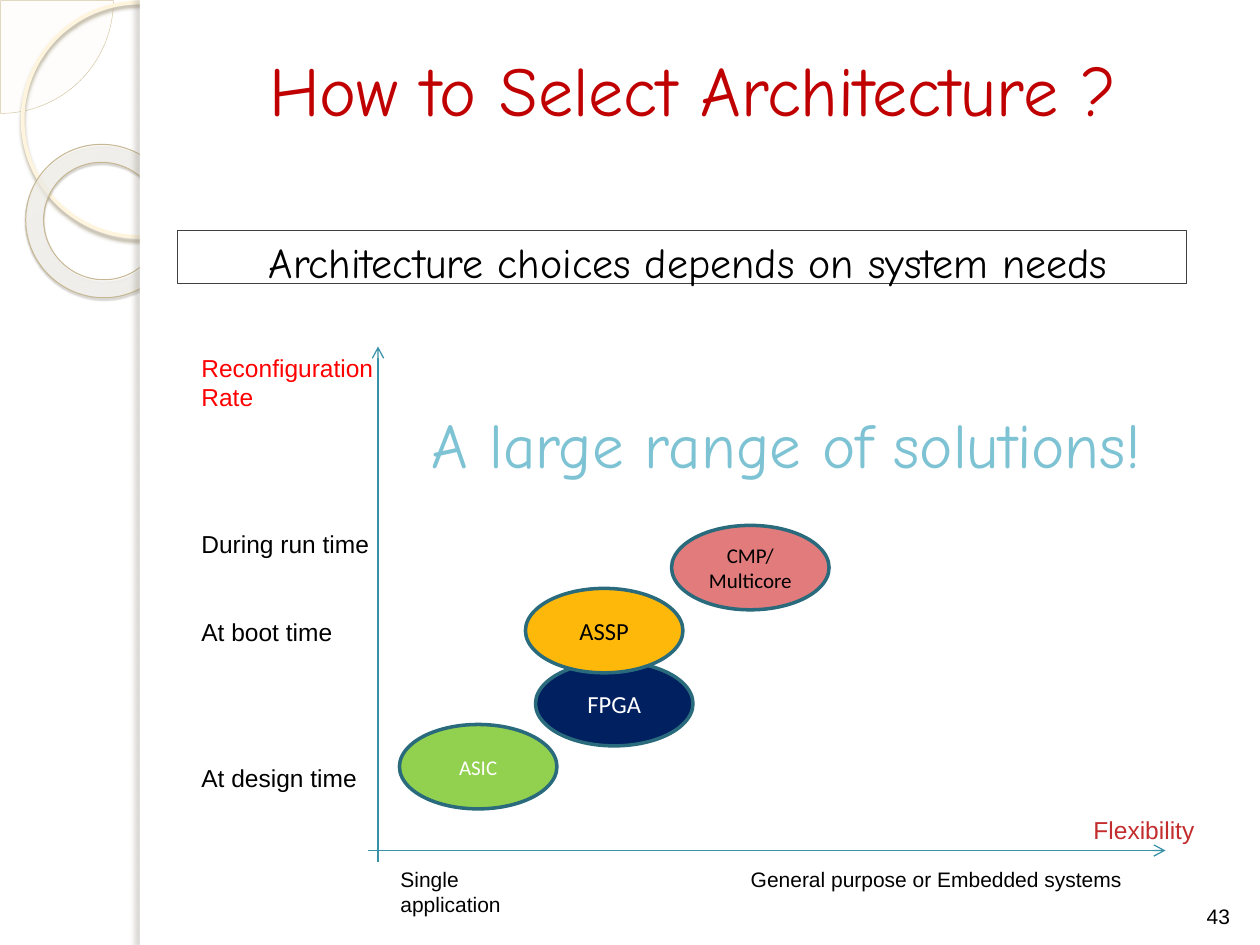
"""Build a slide that places hardware architectures by flexibility and reconfiguration rate."""
from lxml import etree
from pptx import Presentation
from pptx.dml.color import RGBColor
from pptx.enum.shapes import MSO_CONNECTOR, MSO_SHAPE as Preset
from pptx.enum.text import MSO_ANCHOR as Anchor, MSO_AUTO_SIZE as AutoSize, PP_ALIGN as Align
from pptx.oxml import parse_xml
from pptx.oxml.ns import nsdecls, qn
from pptx.util import Inches, Pt

HEADING_FONT, LABEL_FONT, NODE_FONT = "Comic Neue", "Arial", "Calibri"
BLACK, WHITE = "000000", "FFFFFF"
AXIS_COLOR, NODE_OUTLINE = "3891A7", "296B7C"
NODE_SIZE = (1.25, 0.67)
RATE_LINE = 16.75

ARCHITECTURES = [
    (["ASIC"], 3.17, 5.75, "92D050", WHITE, 12),
    (["FPGA"], 4.25, 5.25, "002060", WHITE, 14),
    (["ASSP"], 4.17, 4.67, "FEB80A", BLACK, 14),
    (["CMP/", "Multicore"], 5.33, 4.17, "E17B7C", BLACK, 12),
]
RATES = [
    ("Reconfiguration", "FF0000", 0),
    ("Rate", "FF0000", 0),
    ("During run time", BLACK, 4),
    ("At boot time", BLACK, 2),
    ("At design time", BLACK, 4),
]
LABELS = [
    ("Single application", (3.08, 6.83, 1.5, 0.3), 12, LABEL_FONT, BLACK),
    ("General purpose or Embedded systems", (5.86, 6.83, 3.15, 0.3), 12, LABEL_FONT, BLACK),
    ("Flexibility", (8.58, 6.42, 1.01, 0.34), 14, LABEL_FONT, "C32D2E"),
    ("A large range of solutions!", (3.33, 3.17, 6.38, 0.71), 36, HEADING_FONT, "7EC3D4"),
]
AXES = [((2.92, 6.75), (9.25, 6.75)), ((3, 6.84), (3, 2.75))]
RING_STOPS = [(0, "FFFCF6", 70), (70, "FFFEFB", 55), (100, "F0D28E", 60)]


def rgb(color):
    return RGBColor.from_string(color)


def add_part(slide, preset, box, fill=None, outline=None, width=0.75):
    part = slide.shapes.add_shape(preset, *map(Inches, box))
    part.shadow.inherit = False
    if fill:
        part.fill.solid()
        part.fill.fore_color.rgb = rgb(fill)
    else:
        part.fill.background()
    if outline:
        part.line.color.rgb = rgb(outline)
        part.line.width = Pt(width)
    else:
        part.line.fill.background()
    return part


def add_shadow(part, color, alpha, blur, distance, angle):
    effects = part._element.spPr.find(qn("a:effectLst"))
    effects.append(parse_xml(
        f'<a:outerShdw {nsdecls("a")} blurRad="{Pt(blur)}" dist="{Pt(distance)}" '
        f'dir="{angle * 60000}" algn="tl" rotWithShape="0"><a:srgbClr val="{color}">'
        f'<a:alpha val="{alpha * 1000}"/></a:srgbClr></a:outerShdw>'))


def fill_ring(ring):
    stops = "".join(
        f'<a:gs pos="{place * 1000}"><a:srgbClr val="{color}"><a:alpha val="{alpha * 1000}"/>'
        f'</a:srgbClr></a:gs>' for place, color, alpha in RING_STOPS)
    properties = ring._element.spPr
    properties.replace(properties.find(qn("a:noFill")), parse_xml(
        f'<a:gradFill {nsdecls("a")} rotWithShape="1"><a:gsLst>{stops}</a:gsLst>'
        '<a:path path="circle"><a:fillToRect l="-408000" t="-50000" r="508000" b="150000"/>'
        '</a:path></a:gradFill>'))


def write(part, lines, size, font, color, align=Align.CENTER, anchor=Anchor.MIDDLE):
    frame = part.text_frame
    frame.word_wrap = True
    frame.vertical_anchor = anchor
    for index, line in enumerate(lines):
        paragraph = frame.paragraphs[0] if index == 0 else frame.add_paragraph()
        paragraph.alignment = align
        add_run(paragraph, line, size, font, color)


def add_run(paragraph, text, size, font, color):
    run = paragraph.add_run()
    run.text = text
    run.font.size = Pt(size)
    run.font.name = font
    run.font.color.rgb = rgb(color)


def add_text_box(slide, box):
    return slide.shapes.add_textbox(*map(Inches, box))


def add_unwrapped(slide, box):
    text_box = add_text_box(slide, box)
    text_box.text_frame.word_wrap = False
    text_box.text_frame.auto_size = AutoSize.SHAPE_TO_FIT_TEXT
    return text_box


def add_side_band(slide):
    quarter = add_part(slide, Preset.PIE, (-0.89, -0.89, 1.79, 1.79), "FEFAF4", "D3C39F", 0.25)
    quarter.adjustments[0], quarter.adjustments[1] = 0, 54
    tint = quarter._element.spPr.find(qn("a:solidFill")).find(qn("a:srgbClr"))
    etree.SubElement(tint, qn("a:alpha"), val="33000")

    circle = add_part(slide, Preset.OVAL, (0.18, 0.02, 1.86, 1.86), None, "FFF5DE", 2.15)
    add_shadow(circle, "B0A68F", 85, 2, 2, 90)

    ring = add_part(slide, Preset.DONUT, (0.2, 1.15, 1.23, 1.21), None, "C7B893", 0.58)
    ring.adjustments[0] = 0.118
    ring.rotation = 38.6
    fill_ring(ring)
    add_shadow(ring, "5A5444", 35, 1, 1.2, 75)

    add_part(slide, Preset.RECTANGLE, (1.11, 0, 8.89, 7.5), WHITE)
    edge = add_part(slide, Preset.RECTANGLE, (1.11, 0, 0.08, 7.5), WHITE)
    add_shadow(edge, "736F63", 25, 3, 3, 180)


def add_axis(slide, start, end):
    axis = slide.shapes.add_connector(MSO_CONNECTOR.STRAIGHT, *map(Inches, start + end))
    axis.line.color.rgb = rgb(AXIS_COLOR)
    axis.line.width = Pt(0.75)
    etree.SubElement(axis.line._get_or_add_ln(), qn("a:tailEnd"), type="arrow")
    etree.SubElement(axis._element.spPr, qn("a:effectLst"))


def main():
    deck = Presentation()
    deck.slide_width, deck.slide_height = Inches(10), Inches(7.5)
    slide = deck.slides.add_slide(deck.slide_layouts[6])
    add_side_band(slide)

    number = add_text_box(slide, (9.42, 6.9, 0.5, 0.52))
    write(number, ["43"], 12, LABEL_FONT, BLACK, anchor=Anchor.BOTTOM)

    for start, end in AXES:
        add_axis(slide, start, end)

    for lines, left, top, fill, color, size in ARCHITECTURES:
        node = add_part(slide, Preset.OVAL, (left, top, *NODE_SIZE), fill, NODE_OUTLINE, 2)
        write(node, lines, size, NODE_FONT, color)

    rates = add_unwrapped(slide, (1.5, 2.75, 1.57, 3.64)).text_frame
    for index, (text, color, gap) in enumerate(RATES):
        paragraph = rates.paragraphs[0] if index == 0 else rates.add_paragraph()
        if gap:
            paragraph.space_before = Pt(gap * RATE_LINE)
        add_run(paragraph, text, 14, LABEL_FONT, color)

    for text, box, size, font, color in LABELS:
        label = add_unwrapped(slide, box)
        add_run(label.text_frame.paragraphs[0], text, size, font, color)

    title = add_text_box(slide, (1.24, 0.08, 8.52, 1.25))
    write(title, ["How to Select Architecture ?"], 40, HEADING_FONT, "C00000")

    statement = add_part(slide, Preset.RECTANGLE, (1.41, 1.83, 8.01, 0.42), None, "404040")
    statement.text_frame.margin_left = Inches(0.19)
    write(statement, ["Architecture choices depends on system needs"], 24, HEADING_FONT, BLACK,
          anchor=Anchor.TOP)

    deck.save("out.pptx")


if __name__ == "__main__":
    main()
